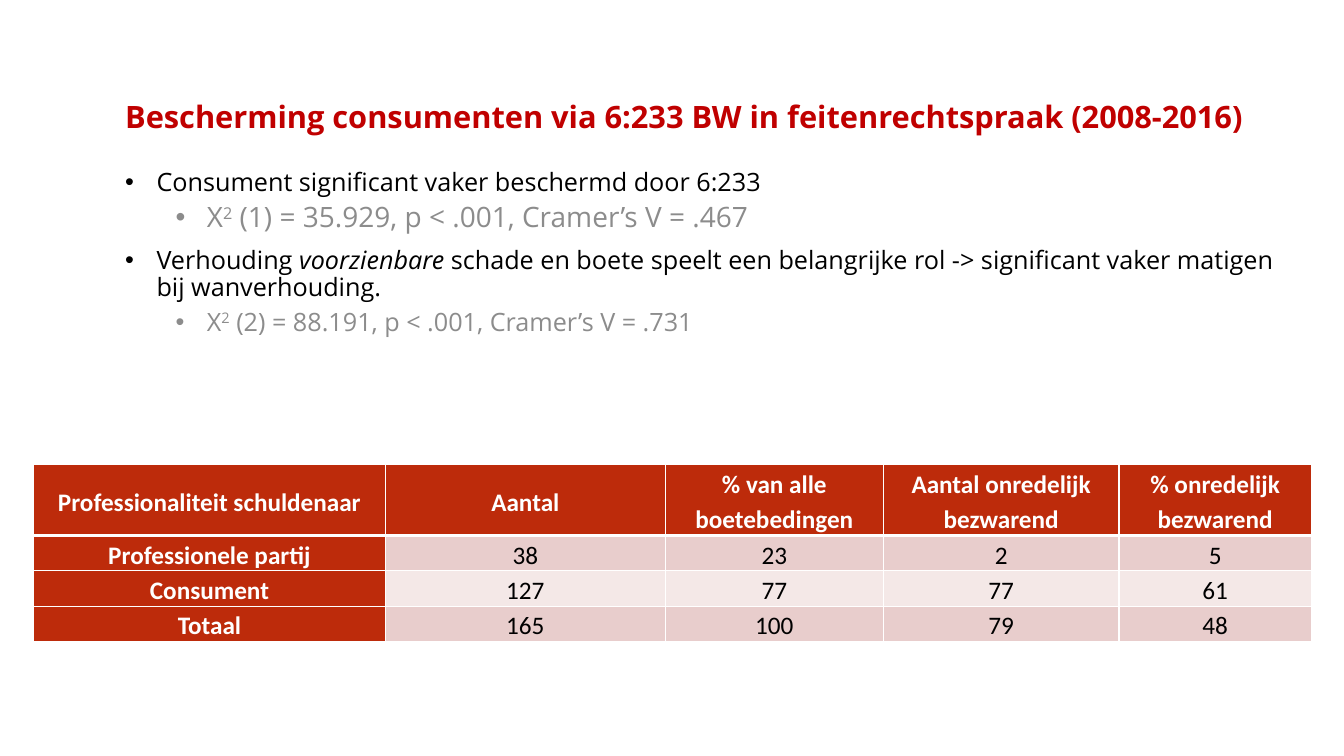
from pptx import Presentation
from pptx.dml.color import RGBColor
from pptx.enum.text import MSO_ANCHOR as Anchor, MSO_AUTO_SIZE as AutoSize, PP_ALIGN as Align
from pptx.oxml.ns import qn
from pptx.util import Cm, Pt
from lxml.etree import SubElement

# Content
TITLE = "Bescherming consumenten via 6:233 BW in feitenrechtspraak (2008-2016)"
# Each bullet: level, size, runs of (text, style)
BULLETS = [
    (0, 18, [("Consument significant vaker beschermd door 6:233", "")]),
    (1, 20, [("X", ""), ("2", "super"), (" (1) = 35.929, p < .001, Cramer’s V = .467", "")]),
    (0, 18, [("Verhouding ", ""), ("voorzienbare ", "italic"),
             ("schade en boete speelt een belangrijke rol -> significant vaker "
              "matigen bij wanverhouding.", "")]),
    (1, 18, [("X", ""), ("2", "super"), (" (2) = 88.191, p < .001, Cramer’s V = .731", "")]),
]
ROWS = [
    ("Professionaliteit schuldenaar", "Aantal", "% van alle boetebedingen",
     "Aantal onredelijk bezwarend", "% onredelijk bezwarend"),
    ("Professionele partij", "38", "23", "2", "5"),
    ("Consument", "127", "77", "77", "61"),
    ("Totaal", "165", "100", "79", "48"),
]
COLUMN_WIDTHS = [8.86, 7.06, 5.49, 5.94, 4.85]
HEADER_HEIGHT, ROW_HEIGHT = 1.75, 0.89
LEVELS = [("000000", 0.79, 10), ("8C8C8C", 2.06, 5)]  # colour, indent, space before
HANGING = 0.79
HEADER_FILL, BANDS = "BD2B0B", ("F4E8E7", "E8CDCC")


def colour(value):
    return RGBColor.from_string(value)


def add_span(para, text, font_name, size, value, bold=False):
    span = para.add_run()
    span.text = text
    font = span.font
    font.name, font.size, font.bold = font_name, Pt(size), bold
    font.color.rgb = colour(value)
    return span


def place(shape, left, top, width, height, anchor):
    shape.left, shape.top, shape.width, shape.height = map(Cm, (left, top, width, height))
    frame = shape.text_frame
    frame.word_wrap, frame.auto_size, frame.vertical_anchor = True, AutoSize.NONE, anchor
    return frame


def add_bullet(para, level):
    props = para._p.get_or_add_pPr()
    props.set("marL", str(Cm(LEVELS[level][1])))
    props.set("indent", str(-Cm(HANGING)))
    SubElement(props, qn("a:buFont")).set("typeface", "Arial")
    SubElement(props, qn("a:buChar")).set("char", "•")


def add_borders(cell, top, bottom):
    props = cell._tc.get_or_add_tcPr()
    for side, width in (("L", 1), ("R", 1), ("T", top), ("B", bottom)):
        line = SubElement(props, qn("a:ln" + side))
        line.set("w", str(Pt(width)))
        fill = SubElement(line, qn("a:solidFill"))
        SubElement(fill, qn("a:srgbClr")).set("val", "FFFFFF")


deck = Presentation()
deck.slide_width, deck.slide_height = Cm(33.87), Cm(19.05)
page = deck.slides.add_slide(deck.slide_layouts[1])

# Title
para = place(page.shapes.title, 2.9, 0.69, 30, 2.84, Anchor.BOTTOM).paragraphs[0]
para.alignment, para.line_spacing = Align.LEFT, Pt(28)
add_span(para, TITLE, "Open Sans", 22, "C00000", True)

# Bullet list
frame = place(page.placeholders[1], 2.9, 4.14, 30, 10.9, Anchor.TOP)
for index, (level, size, spans) in enumerate(BULLETS):
    para = frame.add_paragraph() if index else frame.paragraphs[0]
    value, _, before = LEVELS[level]
    para.level, para.line_spacing = level, 0.9
    para.space_before = Pt(before if index else 0)
    add_bullet(para, level)
    for text, style in spans:
        span = add_span(para, text, "Open Sans", size, value)
        span.font.italic = style == "italic"
        if style == "super":
            span._r.get_or_add_rPr().set("baseline", "30000")

# Table
heights = [HEADER_HEIGHT] + [ROW_HEIGHT] * (len(ROWS) - 1)
table = page.shapes.add_table(len(ROWS), len(COLUMN_WIDTHS), Cm(0.85), Cm(11.71),
                              Cm(sum(COLUMN_WIDTHS)), Cm(sum(heights))).table
for column, width in zip(table.columns, COLUMN_WIDTHS):
    column.width = Cm(width)
for row, (texts, height) in enumerate(zip(ROWS, heights)):
    table.rows[row].height = Cm(height)
    for column, text in enumerate(texts):
        cell = table.cell(row, column)
        heading = row == 0 or column == 0
        add_borders(cell, 3 if row == 1 else 1, 3 if row == 0 else 1)
        cell.fill.solid()
        cell.fill.fore_color.rgb = colour(HEADER_FILL if heading else BANDS[row % 2])
        cell.vertical_anchor = Anchor.MIDDLE
        cell.margin_left = cell.margin_right = Cm(0.18)
        cell.margin_top = cell.margin_bottom = 0
        para = cell.text_frame.paragraphs[0]
        para.alignment, para.line_spacing, para.space_after = Align.CENTER, 1.15, Pt(10)
        add_span(para, text, "Calibri", 18, "FFFFFF" if heading else "000000", heading)

deck.save("out.pptx")
